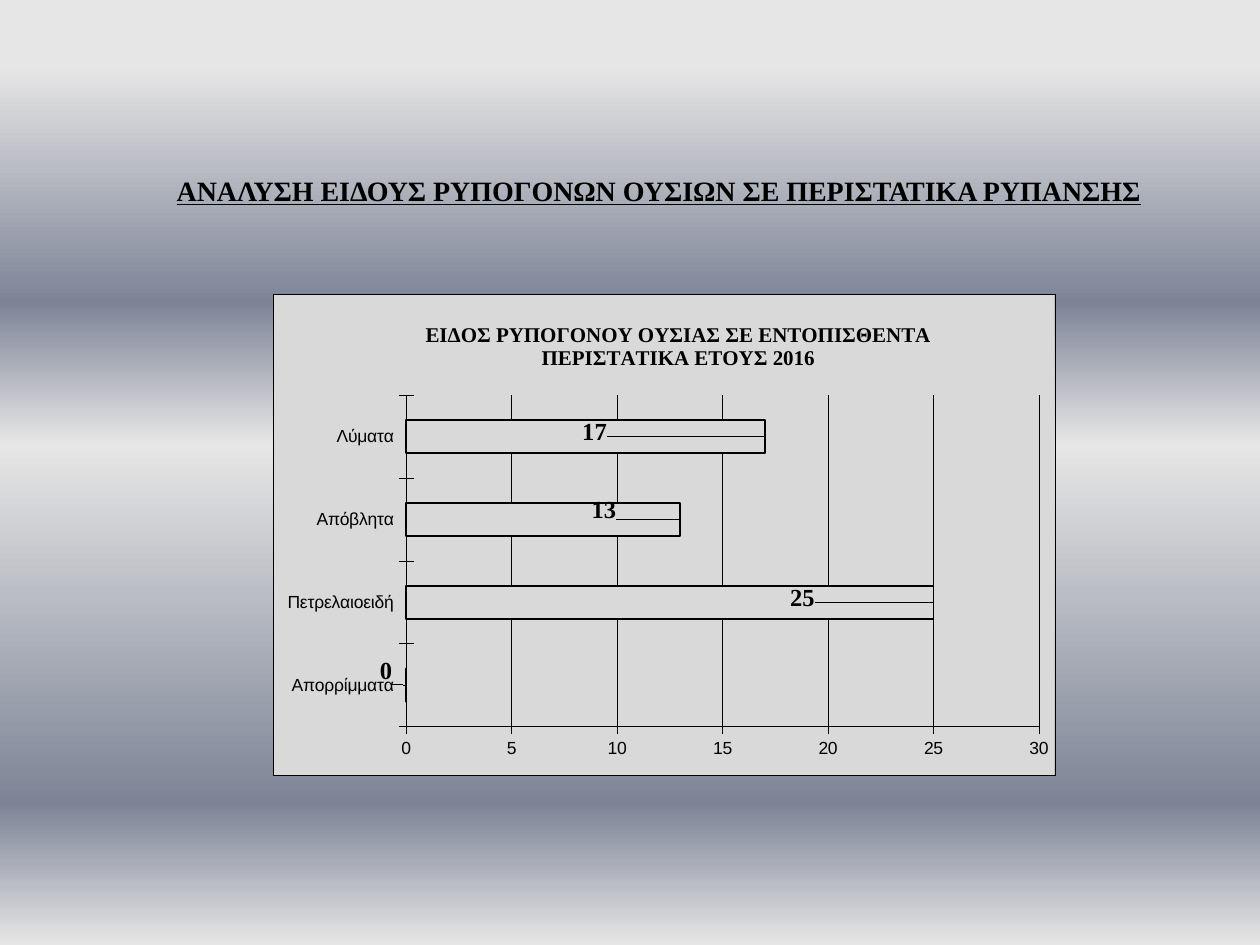
from lxml import etree
from pptx import Presentation
from pptx import util as u
from pptx.chart.data import CategoryChartData
from pptx.dml.color import RGBColor
from pptx.enum import chart as ch, text
from pptx.oxml import parse_xml
from pptx.oxml.ns import nsdecls, qn

TITLE = "ΑΝΑΛΥΣΗ ΕΙΔΟΥΣ ΡΥΠΟΓΟΝΩΝ ΟΥΣΙΩΝ ΣΕ ΠΕΡΙΣΤΑΤΙΚΑ ΡΥΠΑΝΣΗΣ"
CHART_TITLE = "ΕΙΔΟΣ ΡΥΠΟΓΟΝΟΥ ΟΥΣΙΑΣ ΣΕ ΕΝΤΟΠΙΣΘΕΝΤΑ ΠΕΡΙΣΤΑΤΙΚΑ ΕΤΟΥΣ 2016"
BARS = [
    ("Απορρίμματα", 0, (-0.04, -0.03)),
    ("Πετρελαιοειδή", 25, (-0.19, -0.01)),
    ("Απόβλητα", 13, (-0.12, -0.02)),
    ("Λύματα", 17, (-0.24, -0.01)),
]
STOPS = [(7, "E6E6E6"), (32, "7D8496"), (47, "E6E6E6"), (85, "7D8496"), (100, "E6E6E6")]
BLACK, GREY = "000000", "D9D9D9"
SERIF = {"name": "Times New Roman", "bold": True}
TITLE_BOX = (143, 97, 1032, 110)
CHART_BOX = (273, 294, 782, 481)
PLOT = {"x": 0.17, "y": 0.21, "w": 0.81, "h": 0.69}


def px(n):
    return u.Emu(n * 914400 // 126)


def rgb(h):
    return RGBColor.from_string(h)


def style(font, **values):
    for key, value in values.items():
        setattr(font, key, value)
    font.color.rgb = rgb(BLACK)


def outline(line, width):
    line.color.rgb = rgb(BLACK)
    line.width = u.Pt(width)


def layout(modes, values):
    items = [*modes.items(), *values.items()]
    inner = "".join(f'<c:{k} val="{v}"/>' for k, v in items)
    return parse_xml(f'<c:layout {nsdecls("c")}><c:manualLayout>{inner}</c:manualLayout></c:layout>')


def place(parent, new, before=None):
    old = parent.find(qn("c:layout"))
    if old is not None:
        parent.replace(old, new)
    else:
        before.addprevious(new)


prs = Presentation()
prs.slide_width, prs.slide_height = px(1260), px(945)
s = prs.slides.add_slide(prs.slide_layouts[5])

fill = s.background.fill
fill.gradient()
grad = s.background._cSld.find(".//" + qn("a:gradFill"))
gs_list = grad.find(qn("a:gsLst"))
for gs in list(gs_list):
    gs_list.remove(gs)
for pos, colour in STOPS:
    gs = etree.SubElement(gs_list, qn("a:gs"), pos=str(pos * 1000))
    etree.SubElement(gs, qn("a:srgbClr"), val=colour)
grad.find(qn("a:lin")).set("ang", "5400000")

sp = s.shapes.title
sp.left, sp.top, sp.width, sp.height = map(px, TITLE_BOX)
tf = sp.text_frame
for key, value in {
    "margin_left": 0, "margin_right": 0, "margin_top": u.Inches(0.05), "margin_bottom": 0,
    "vertical_anchor": text.MSO_ANCHOR.BOTTOM, "word_wrap": True,
    "auto_size": text.MSO_AUTO_SIZE.NONE,
}.items():
    setattr(tf, key, value)
p = tf.paragraphs[0]
p.alignment = text.PP_ALIGN.CENTER
r = p.add_run()
r.text = TITLE
style(r.font, size=u.Pt(16), underline=True, **SERIF)

data = CategoryChartData()
data.categories = [name for name, _, _ in BARS]
data.add_series("Series 1", [value for _, value, _ in BARS])
chart = s.shapes.add_chart(ch.XL_CHART_TYPE.BAR_CLUSTERED, *map(px, CHART_BOX), data).chart
chart.has_legend = False
style(chart.font, name="Arial", size=u.Pt(10))

chart.has_title = True
p = chart.chart_title.text_frame.paragraphs[0]
r = p.add_run()
r.text = CHART_TITLE
style(r.font, size=u.Pt(12), **SERIF)
chart.chart_title.include_in_layout = False
title = chart.chart_title._element
place(title, layout({"xMode": "edge", "yMode": "edge"}, {"x": 0.19, "y": 0.05}),
      title.find(qn("c:overlay")))

space = chart._chartSpace
space.find(qn("c:chart")).addnext(parse_xml(
    f'<c:spPr {nsdecls("c", "a")}><a:solidFill><a:srgbClr val="{GREY}"/></a:solidFill>'
    f'<a:ln w="3175"><a:solidFill><a:srgbClr val="{BLACK}"/></a:solidFill></a:ln></c:spPr>'))
area = space.find(".//" + qn("c:plotArea"))
place(area, layout({"layoutTarget": "inner", "xMode": "edge", "yMode": "edge"}, PLOT), area[0])

for axis in (chart.category_axis, chart.value_axis):
    axis.major_tick_mark = ch.XL_TICK_MARK.CROSS
    axis.minor_tick_mark = ch.XL_TICK_MARK.NONE
    outline(axis.format.line, 0.25)
    style(axis.tick_labels.font, name="Arial", size=u.Pt(10))
chart.category_axis.tick_label_position = ch.XL_TICK_LABEL_POSITION.LOW
axis = chart.value_axis
axis.minimum_scale, axis.maximum_scale, axis.major_unit = 0, 30, 5
axis.has_major_gridlines = True
outline(axis.major_gridlines.format.line, 0.25)

plot = chart.plots[0]
plot.gap_width = 150
plot.vary_by_categories = False
series = plot.series[0]
series.format.fill.solid()
series.format.fill.fore_color.rgb = rgb(GREY)
outline(series.format.line, 1)
labels = series.data_labels
labels.show_value = True
style(labels.font, size=u.Pt(14), **SERIF)
for i, (_, _, (dx, dy)) in enumerate(BARS):
    label = series.points[i].data_label
    style(label.font, size=u.Pt(14), **SERIF)
    label.position = ch.XL_LABEL_POSITION.OUTSIDE_END
    d_lbl = labels._element.findall(qn("c:dLbl"))[i]
    place(d_lbl, layout({}, {"x": dx, "y": dy}), d_lbl[1])

prs.save("out.pptx")
